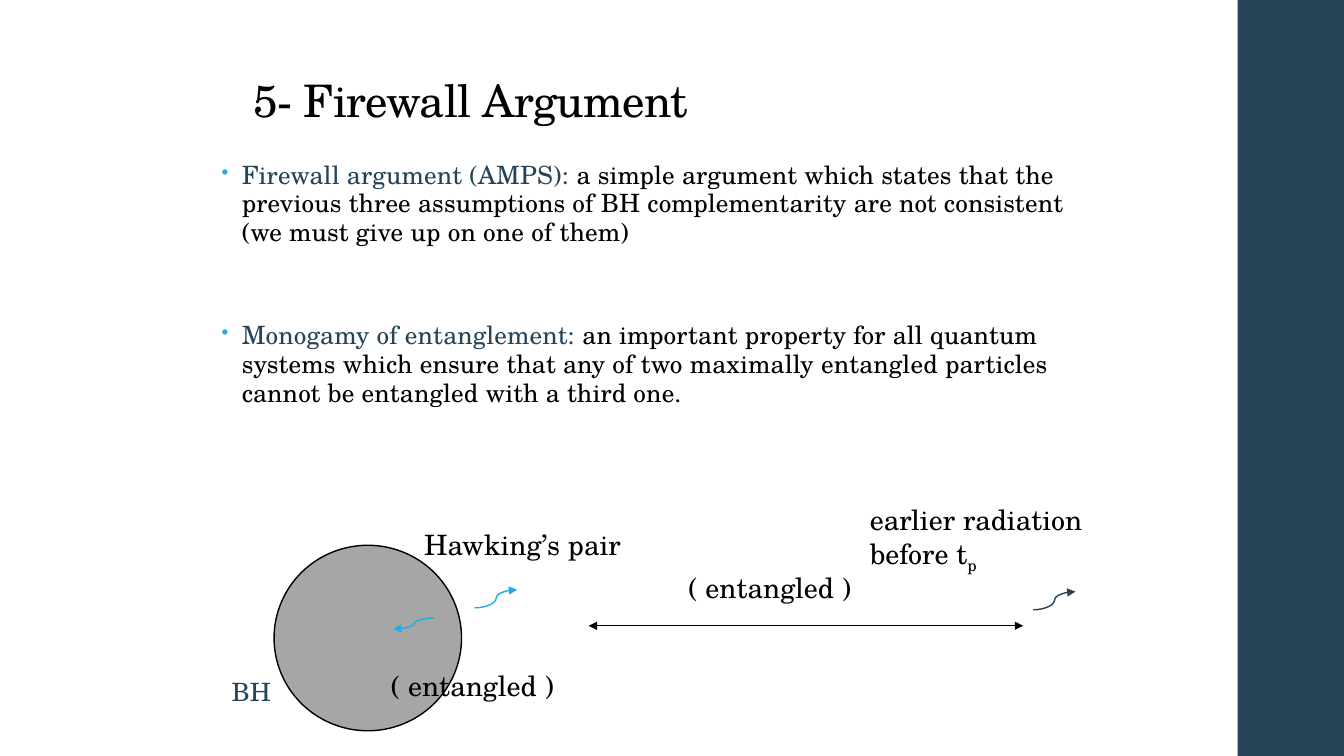
"""Build the firewall argument slide with its entangled pairs."""
from dataclasses import dataclass

from lxml.etree import SubElement
from pptx import Presentation
from pptx.dml.color import RGBColor
from pptx.enum.shapes import MSO_CONNECTOR as Link, MSO_SHAPE as Form
from pptx.enum.text import MSO_ANCHOR as Anchor, MSO_AUTO_SIZE as Auto
from pptx.oxml.ns import qn
from pptx.util import Pt


@dataclass(frozen=True)
class Theme:
    font: str = "TeX Gyre Schola"
    black: str = "000000"
    navy: str = "264457"
    sky: str = "1CADE4"
    gray: str = "A6A6A6"
    head: float = 32
    label: float = 20
    body: float = 18
    line: float = 1


THEME = Theme()


def put(item, values):
    for name, value in values.items():
        setattr(item, name, value)


def tint(fill, color):
    fill.solid()
    fill.fore_color.rgb = RGBColor.from_string(color)


def add_form(slide, kind, box, fill, edge=None):
    shape = slide.shapes.add_shape(kind, *map(Pt, box))
    shape.shadow.inherit = False
    tint(shape.fill, fill)
    if edge:
        tint(shape.line.fill, edge)
        shape.line.width = Pt(THEME.line)
    else:
        shape.line.fill.background()


def add_run(para, text, size, color, **extra):
    run = para.add_run()
    put(run, {"text": text})
    put(run.font, {"name": THEME.font, "size": Pt(size)})
    tint(run.font.fill, color)
    props = run.font._element
    for name, value in extra.items():
        props.set(name, str(value))


def add_frame(slide, box, **values):
    frame = slide.shapes.add_textbox(*map(Pt, box)).text_frame
    put(frame, {"word_wrap": True, **values})
    return frame


def add_label(slide, box, text, size=THEME.label, color=THEME.black, wrap=True):
    frame = add_frame(slide, box, word_wrap=wrap,
                      auto_size=Auto.SHAPE_TO_FIT_TEXT)
    add_run(frame.paragraphs[0], text, size, color)
    return frame.paragraphs[0]


def add_point(para, gap, term, text):
    put(para, {"line_spacing": 0.95, "space_before": Pt(gap),
               "space_after": Pt(2)})
    props = para._p.get_or_add_pPr()
    for name, value in {"marL": Pt(14.4), "indent": -Pt(14.4)}.items():
        props.set(name, str(value))
    color = SubElement(props, qn("a:buClr"))
    SubElement(color, qn("a:srgbClr"), val=THEME.sky)
    SubElement(props, qn("a:buSzPct"), val="80000")
    SubElement(props, qn("a:buChar"), char="•")
    add_run(para, term, THEME.body, THEME.navy, spc=10)
    add_run(para, text, THEME.body, THEME.black, spc=10)


def add_arrow(slide, kind, ends, color, tips=("tailEnd",)):
    arrow = slide.shapes.add_connector(kind, *map(Pt, ends))
    tint(arrow.line.fill, color)
    arrow.line.width = Pt(THEME.line)
    props = arrow.element.spPr
    for tip in tips:
        SubElement(props.find(qn("a:ln")), qn(f"a:{tip}"), type="triangle")
    SubElement(props, qn("a:effectLst"))


def main():
    deck = Presentation()
    put(deck, {"slide_width": Pt(960), "slide_height": Pt(540)})
    slide = deck.slides.add_slide(deck.slide_layouts[6])
    add_form(slide, Form.RECTANGLE, (884, 0, 76, 540), THEME.navy)

    title = add_frame(slide, (174.2, 16.6, 648, 77.8),
                      vertical_anchor=Anchor.BOTTOM).paragraphs[0]
    put(title, {"line_spacing": 0.9})
    add_run(title, "5- Firewall Argument", THEME.head, THEME.black, spc=-50)

    body = add_frame(slide, (151.2, 111.6, 642.2, 408.2))
    add_point(body.paragraphs[0], 14, "Firewall argument (AMPS): ",
              "a simple argument which states that the previous three "
              "assumptions of BH complementarity are not consistent "
              "(we must give up on one of them)")
    add_point(body.add_paragraph(), 51, "Monogamy of entanglement: ",
              "an important property for all quantum systems which ensure "
              "that any of two maximally entangled particles cannot be "
              "entangled with a third one.")

    add_arrow(slide, Link.CURVE, (738, 435.6, 768.2, 422.6), THEME.navy)
    add_label(slide, (158.4, 479.5, 56.2, 28.8), "BH", THEME.body, THEME.navy)
    add_form(slide, Form.OVAL, (195.8, 389.5, 133.9, 132.5), THEME.gray,
             THEME.black)
    add_label(slide, (295.9, 373, 157, 31.7), "Hawking’s pair", wrap=False)
    add_arrow(slide, Link.STRAIGHT, (420.5, 447, 730.8, 447), THEME.black,
              ("headEnd", "tailEnd"))
    for box in ((484.6, 403.9, 158.4, 31.7), (272.2, 473.8, 148.3, 31.7)):
        add_label(slide, box, "( entangled )")
    for ends in ((310.3, 441.4, 280.8, 449.3), (339.1, 434.2, 369.4, 421.2)):
        add_arrow(slide, Link.CURVE, ends, THEME.sky)
    early = add_label(slide, (614.2, 355.7, 168.5, 55.4),
                      "earlier radiation before t")
    add_run(early, "p", THEME.label, THEME.black, baseline=-25000)

    deck.save("out.pptx")


if __name__ == "__main__":
    main()
